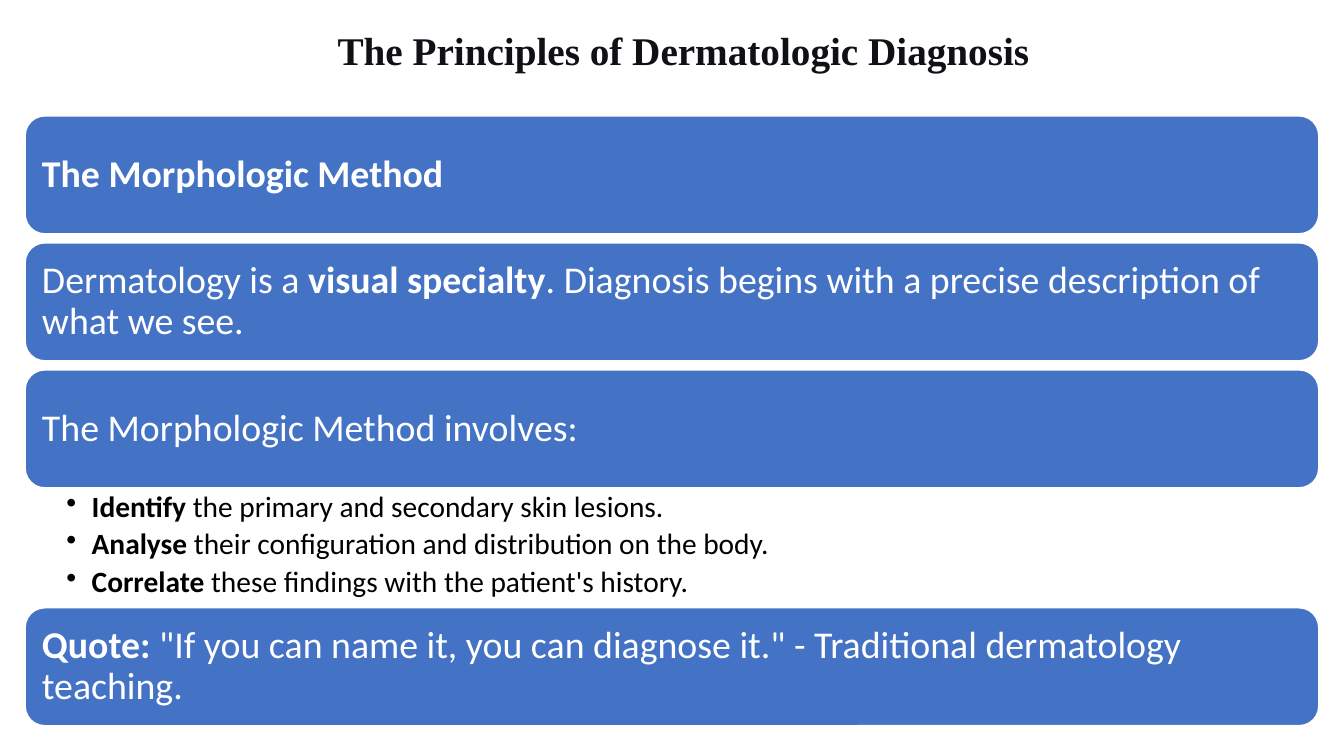
from lxml import etree
from pptx import Presentation
from pptx import util as u
from pptx.dml.color import RGBColor
from pptx.enum import shapes, text
from pptx.oxml import ns

BLUE = RGBColor(0x44, 0x72, 0xC4)
WHITE = RGBColor(0xFF, 0xFF, 0xFF)
BLACK = RGBColor(0, 0, 0)
INK = RGBColor(0x0F, 0x11, 0x15)

WIDTH, HEIGHT = u.Inches(13.33), u.Inches(7.5)
LEFT, TOP, BAR_WIDTH = u.Inches(0.25), u.Inches(1.15), u.Inches(12.83)
BAR_HEIGHT, GAP, LIST_HEIGHT = u.Inches(1.17), u.Inches(0.09), u.Inches(1.19)

TITLE_FONT = {"name": "Times New Roman", "size": u.Pt(28), "bold": True}
BAR_FONT = {"name": "Calibri", "size": u.Pt(27)}
LIST_FONT = {"name": "Calibri", "size": u.Pt(21)}
BAR_PARAGRAPH = {"alignment": text.PP_ALIGN.LEFT, "line_spacing": 0.9}
LIST_PARAGRAPH = {**BAR_PARAGRAPH, "level": 1, "space_after": u.Pt(4.2)}
BAR_FRAME = {"word_wrap": True, "vertical_anchor": text.MSO_ANCHOR.MIDDLE,
             **{f"margin_{side}": u.Inches(0.11)
                for side in ("left", "top", "right", "bottom")}}
LIST_FRAME = {"word_wrap": True, "margin_left": u.Inches(0.41),
              "margin_right": u.Inches(0.21), "margin_top": u.Inches(0.04),
              "margin_bottom": u.Inches(0.04)}
TITLE_FRAME = {"word_wrap": False,
               "auto_size": text.MSO_AUTO_SIZE.SHAPE_TO_FIT_TEXT}

TITLE = "The Principles of Dermatologic Diagnosis"
BARS = [
    [("The Morphologic Method", True)],
    [("Dermatology is a ", False), ("visual specialty", True),
     (". Diagnosis begins with a precise description of what we see.", False)],
    [("The Morphologic Method involves:", False)],
]
STEPS = [
    [("Identify", True), (" the primary and secondary skin lesions.", False)],
    [("Analyse", True),
     (" their configuration and distribution on the body.", False)],
    [("Correlate", True),
     (" these findings with the patient's history.", False)],
]
QUOTE = [("Quote:", True),
         (' "If you can name it, you can diagnose it."'
          " - Traditional dermatology teaching.", False)]


def apply_format(target, values):
    """Set each named attribute of the target."""
    for name, value in values.items():
        setattr(target, name, value)


def write_runs(paragraph, runs, font, color):
    """Fill a paragraph with (wording, bold) runs."""
    for wording, bold in runs:
        run = paragraph.add_run()
        run.text = wording
        apply_format(run.font, {**font, "bold": bold})
        run.font.color.rgb = color


def add_title(slide, left, top, width, height):
    """Place the slide title in the given box."""
    frame = slide.shapes.add_textbox(left, top, width, height).text_frame
    apply_format(frame, TITLE_FRAME)
    write_runs(frame.paragraphs[0], [(TITLE, True)], TITLE_FONT, INK)


def add_bar(slide, runs, left, top, width, height):
    """Place one rounded blue bar with its statement."""
    shape = slide.shapes.add_shape(
        shapes.MSO_SHAPE.ROUNDED_RECTANGLE, left, top, width, height)
    shape.shadow.inherit = False
    shape.fill.solid()
    shape.fill.fore_color.rgb = BLUE
    shape.line.color.rgb = WHITE
    shape.line.width = u.Pt(1)
    apply_format(shape.text_frame, BAR_FRAME)
    paragraph = shape.text_frame.paragraphs[0]
    apply_format(paragraph, BAR_PARAGRAPH)
    write_runs(paragraph, runs, BAR_FONT, WHITE)


def add_steps(slide, left, top, width, height):
    """Place the bulleted steps in the given box."""
    frame = slide.shapes.add_textbox(left, top, width, height).text_frame
    apply_format(frame, LIST_FRAME)
    for index, runs in enumerate(STEPS):
        paragraph = frame.add_paragraph() if index else frame.paragraphs[0]
        apply_format(paragraph, LIST_PARAGRAPH)
        properties = paragraph._p.get_or_add_pPr()
        properties.set("marL", str(u.Inches(0.25)))
        properties.set("indent", str(-u.Inches(0.25)))
        etree.SubElement(properties, ns.qn("a:buChar")).set("char", "•")
        write_runs(paragraph, runs, LIST_FONT, BLACK)


def add_method(slide, left, top, width):
    """Stack the bars, the steps and the quote downwards from the top."""
    for index, runs in enumerate(BARS):
        bar_top = top + index * (BAR_HEIGHT + GAP)
        add_bar(slide, runs, left, bar_top, width, BAR_HEIGHT)
    steps_top = bar_top + BAR_HEIGHT
    add_steps(slide, left, steps_top, width, LIST_HEIGHT)
    add_bar(slide, QUOTE, left, steps_top + LIST_HEIGHT, width, BAR_HEIGHT)


def main():
    """Build and save the presentation."""
    presentation = Presentation()
    apply_format(presentation, {"slide_width": WIDTH, "slide_height": HEIGHT})
    slide = presentation.slides.add_slide(presentation.slide_layouts[6])
    add_method(slide, LEFT, TOP, BAR_WIDTH)
    add_title(slide, u.Inches(3.25), u.Inches(0.21),
              u.Inches(7.14), u.Inches(0.57))
    presentation.save("out.pptx")


if __name__ == "__main__":
    main()
